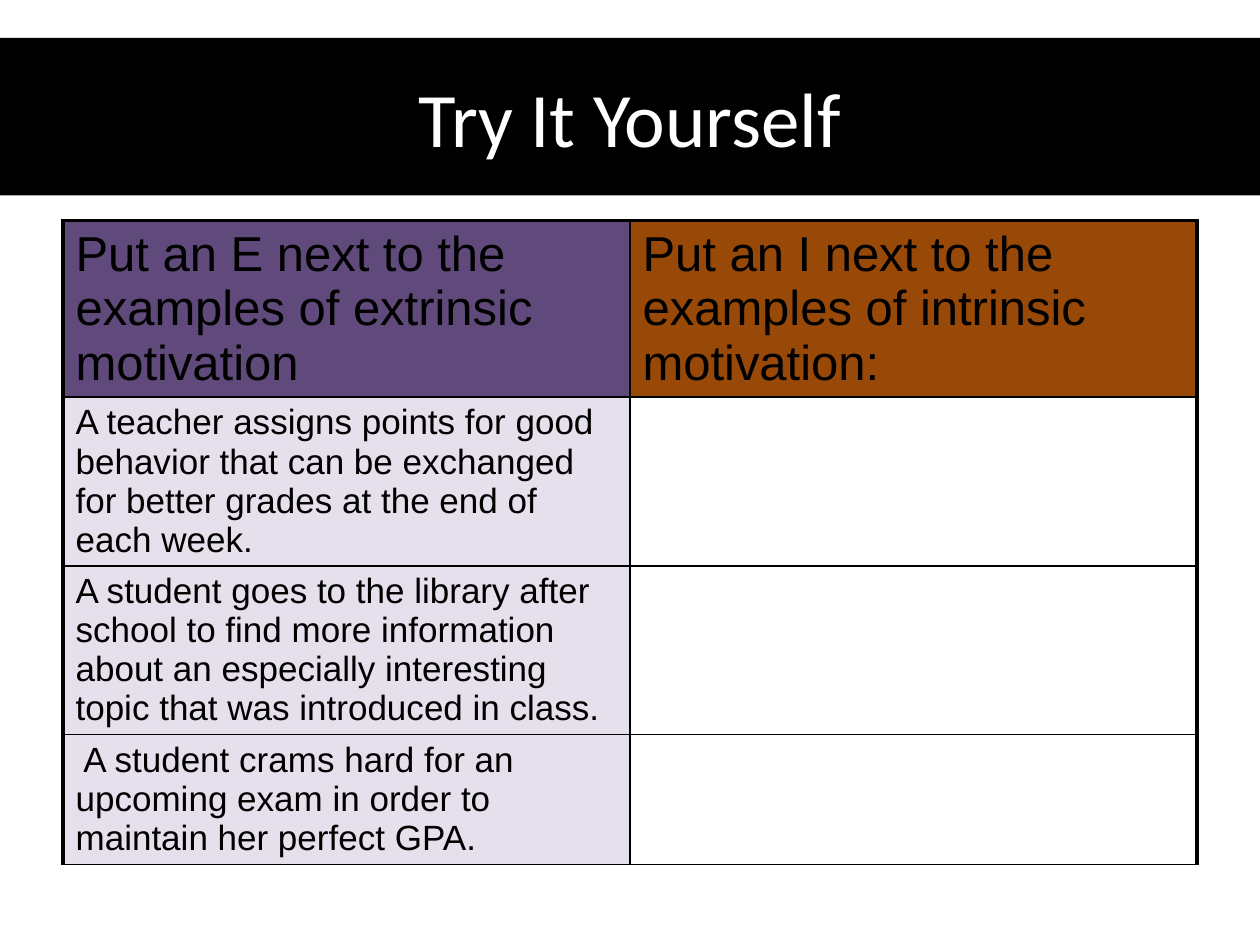
from lxml import etree
from pptx import Presentation
from pptx.dml.color import RGBColor
from pptx.enum.text import MSO_ANCHOR, PP_ALIGN
from pptx.oxml.ns import qn
from pptx.util import Inches, Pt

CENTER = PP_ALIGN.CENTER
MIDDLE = MSO_ANCHOR.MIDDLE
TITLE_ONLY = 5

COLORS = {
    "black": "000000",
    "white": "FFFFFF",
    "purple": "604A7B",
    "orange": "984807",
    "lavender": "E6E0EC",
}
THIN, THICK = 1, 2.25

HEADERS = [
    ("Put an E next to the examples of extrinsic motivation", "purple"),
    ("Put an I next to the examples of intrinsic motivation:", "orange"),
]
EXAMPLES = [
    "A teacher assigns points for good behavior that can be exchanged "
    "for better grades at the end of each week.",
    "A student goes to the library after school to find more information "
    "about an especially interesting topic that was introduced in class.",
    " A student crams hard for an upcoming exam in order to maintain "
    "her perfect GPA.",
]
ROW_HEIGHTS = [1.4, 1.34, 1.34, 1.03]


class SlideBuilder:
    def __init__(self, prs):
        self.s = prs.slides.add_slide(prs.slide_layouts[TITLE_ONLY])

    def color(self, name):
        return RGBColor.from_string(COLORS[name])

    def text(self, tf, text, size, font, color):
        tf.text = text
        r = tf.paragraphs[0].runs[0]
        r.font.size = Pt(size)
        r.font.name = font
        r.font.color.rgb = self.color(color)

    def title(self, text, left, top, width, height):
        sp = self.s.shapes.title
        sp.left, sp.top = Inches(left), Inches(top)
        sp.width, sp.height = Inches(width), Inches(height)
        sp.fill.solid()
        sp.fill.fore_color.rgb = self.color("black")
        tf = sp.text_frame
        tf.vertical_anchor = MIDDLE
        self.text(tf, text, 44, "Calibri", "white")
        tf.paragraphs[0].alignment = CENTER

    def table(self, left, top, col_widths, row_heights):
        frame = self.s.shapes.add_table(
            len(row_heights), len(col_widths), Inches(left), Inches(top),
            Inches(sum(col_widths)), Inches(sum(row_heights)))
        table = frame.table
        table.first_row = table.horz_banding = False
        for column, width in zip(table.columns, col_widths):
            column.width = Inches(width)
        for row, height in zip(table.rows, row_heights):
            row.height = Inches(height)
        return table

    def cell(self, cell, text, size, fill, borders):
        if text:
            self.text(cell.text_frame, text, size, "Arial", "black")
        # Border lines must come before the fill in the cell properties
        tcPr = cell._tc.get_or_add_tcPr()
        for side, width in borders.items():
            ln = etree.SubElement(tcPr, qn(f"a:ln{side}"), w=str(Pt(width)))
            solid = etree.SubElement(ln, qn("a:solidFill"))
            etree.SubElement(solid, qn("a:srgbClr"), val=COLORS["black"])
        cell.fill.solid()
        cell.fill.fore_color.rgb = self.color(fill)


def main():
    prs = Presentation()
    prs.slide_width, prs.slide_height = Inches(10), Inches(7.5)
    slide = SlideBuilder(prs)

    # Title band
    slide.title("Try It Yourself", 0, 0.3, 10, 1.25)

    # Exercise table: headers, then one example and one blank answer per row
    table = slide.table(0.5, 1.75, [4.5, 4.5], ROW_HEIGHTS)
    rows = [HEADERS] + [[(text, "lavender"), ("", "white")] for text in EXAMPLES]
    for i, row in enumerate(rows):
        for j, (text, fill) in enumerate(row):
            borders = {
                "L": THICK if j == 0 else THIN,
                "R": THICK if j == 1 else THIN,
                "T": THICK if i == 0 else THIN,
                "B": THIN,
            }
            size = 28 if i == 0 else 20
            slide.cell(table.cell(i, j), text, size, fill, borders)

    prs.save("out.pptx")


if __name__ == "__main__":
    main()
